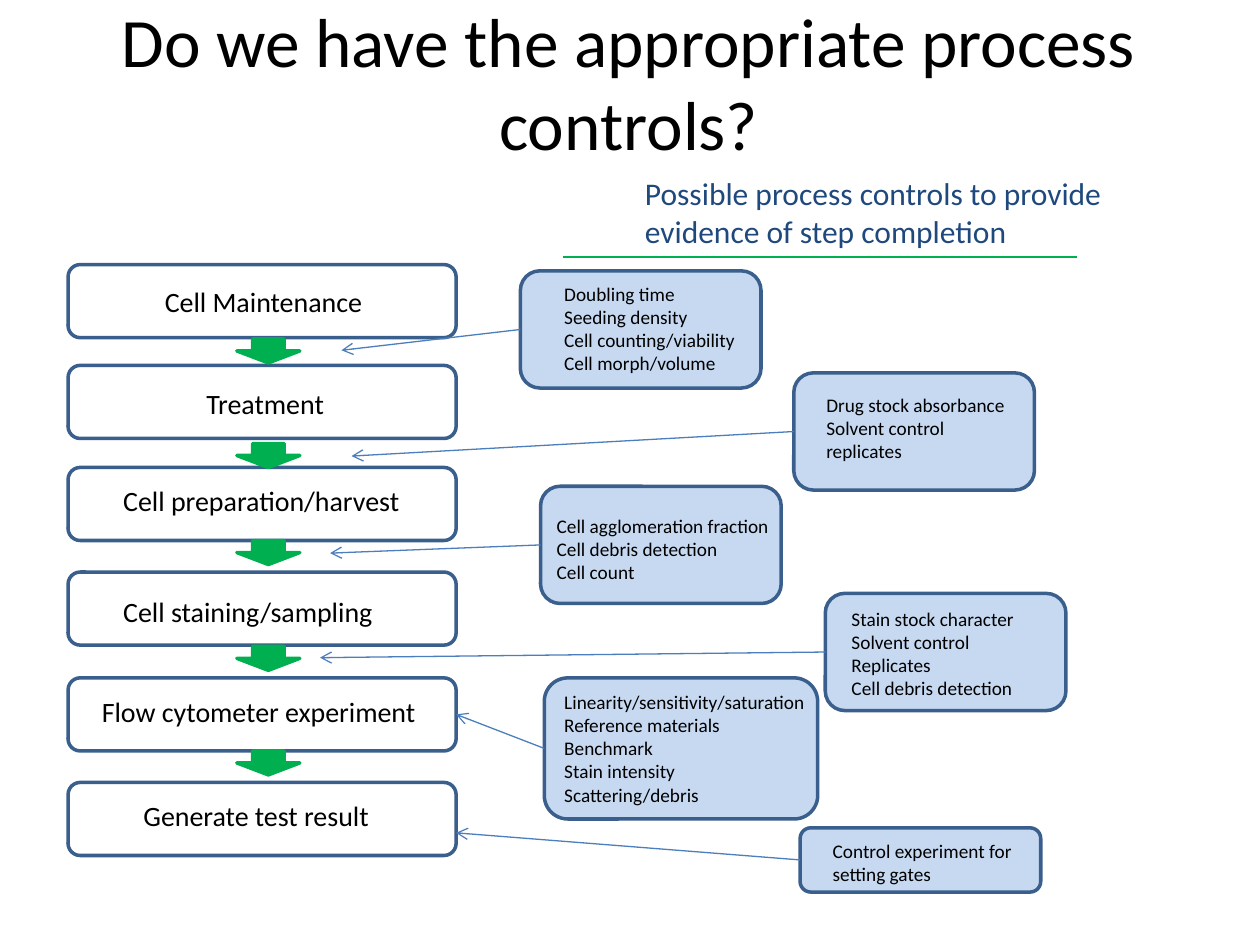
from pptx import Presentation
from pptx.dml.color import RGBColor
from pptx.enum.shapes import MSO_CONNECTOR, MSO_SHAPE
from pptx.enum.text import MSO_ANCHOR, MSO_AUTO_SIZE, PP_ALIGN
from pptx.oxml.ns import qn
from pptx.util import Inches, Pt
from lxml import etree

BLACK = RGBColor(0x00, 0x00, 0x00)
NAVY = RGBColor(0x1F, 0x49, 0x7D)
EDGE = RGBColor(0x3A, 0x5F, 0x8C)
BLUE = RGBColor(0x4B, 0x7E, 0xBC)
PALE = RGBColor(0xC6, 0xD9, 0xF1)
GREEN = RGBColor(0x00, 0xB0, 0x50)
ROUND = MSO_SHAPE.ROUNDED_RECTANGLE
DOWN = MSO_SHAPE.DOWN_ARROW
STRAIGHT = MSO_CONNECTOR.STRAIGHT
TOP, MIDDLE = MSO_ANCHOR.TOP, MSO_ANCHOR.MIDDLE
CENTER = PP_ALIGN.CENTER
NO_FIT = MSO_AUTO_SIZE.NONE
LEFT, RIGHT = 1, 3

# label, box top, label left, label top
STEPS = [
    ("Cell Maintenance", 2.1, 1.21, 2.21),
    ("Treatment", 2.9, 1.54, 3.02),
    ("Cell preparation/harvest", 3.71, 0.88, 3.79),
    ("Cell staining/sampling", 4.54, 0.88, 4.67),
    ("Flow cytometer experiment", 5.38, 0.71, 5.46),
    ("Generate test result", 6.21, 1.04, 6.29),
]
ARROWS = [2.69, 3.52, 4.29, 5.13, 5.96]

# box, text place, lines, arrow tip (a step number joins that step's side)
CHECKS = [
    ((4.13, 2.15, 1.91, 0.93), (4.38, 2.19, 1.56, 0.84),
     ["Doubling time", "Seeding density", "Cell counting/viability",
      "Cell morph/volume"], (2.71, 2.78)),
    ((6.3, 2.96, 1.91, 0.93), (6.46, 3.07, 1.63, 0.66),
     ["Drug stock absorbance", "Solvent control", "replicates"],
     (2.79, 3.62)),
    ((4.29, 3.86, 1.91, 0.93), (4.32, 4.03, 1.9, 0.66),
     ["Cell agglomeration fraction", "Cell debris detection",
      "Cell count"], (2.62, 4.39)),
    ((6.55, 4.71, 1.91, 0.93), (6.66, 4.77, 1.5, 0.84),
     ["Stain stock character", "Solvent control", "Replicates",
      "Cell debris detection"], (2.54, 5.22)),
    ((4.32, 5.38, 2.17, 1.12), (4.38, 5.43, 2.13, 1.03),
     ["Linearity/sensitivity/saturation", "Reference materials",
      "Benchmark", "Stain intensity", "Scattering/debris"], 4),
    ((6.35, 6.57, 1.91, 0.51), (6.51, 6.61, 1.97, 0.47),
     ["Control experiment for setting gates"], (3.62, 6.61)),
]


class Board:
    font = "Calibri"

    def __init__(self, slide):
        self.slide = slide
        self.shapes = slide.shapes

    def fill_text(self, frame, lines, size, color, align=None):
        for i, line in enumerate(lines):
            para = frame.paragraphs[0] if i == 0 else frame.add_paragraph()
            if align is not None:
                para.alignment = align
            run = para.add_run()
            run.text = line
            run.font.name = self.font
            run.font.size = Pt(size)
            run.font.color.rgb = color

    def title(self, place, text):
        box = self.shapes.title
        box.left, box.top, box.width, box.height = map(Inches, place)
        frame = box.text_frame
        frame.word_wrap = True
        frame.auto_size = NO_FIT
        frame.vertical_anchor = MIDDLE
        self.fill_text(frame, [text], 39.6, BLACK, CENTER)

    def text(self, place, lines, size, color=BLACK, wrap=True):
        frame = self.shapes.add_textbox(*map(Inches, place)).text_frame
        frame.word_wrap = wrap
        frame.vertical_anchor = TOP
        self.fill_text(frame, lines, size, color)

    def shape(self, kind, place, fill, edge):
        item = self.shapes.add_shape(kind, *map(Inches, place))
        item.shadow.inherit = False
        if fill is None:
            item.fill.background()
        else:
            item.fill.solid()
            item.fill.fore_color.rgb = fill
        item.line.color.rgb = edge
        item.line.width = Pt(2)
        return item

    def line(self, start, end, color, head=False):
        item = self.shapes.add_connector(
            STRAIGHT, *map(Inches, (*start, *end)))
        item.line.color.rgb = color
        item.line.width = Pt(0.75)
        props = item._element.spPr
        if head:
            stroke = props.find(qn("a:ln"))
            etree.SubElement(stroke, qn("a:tailEnd"), type="arrow")
        etree.SubElement(props, qn("a:effectLst"))
        return item


def main():
    deck = Presentation()
    deck.slide_width, deck.slide_height = Inches(10), Inches(7.5)
    board = Board(deck.slides.add_slide(deck.slide_layouts[5]))
    board.title((0.49, 0.02, 9, 1.25),
                "Do we have the appropriate process controls?")

    steps = []
    for label, top, left, y in STEPS:
        steps.append(board.shape(ROUND, (0.54, top, 3.08, 0.58), None, EDGE))
        board.text((left, y, 2.83, 0.37), [label], 16)
    for top in ARROWS:
        board.shape(DOWN, (1.88, top, 0.5, 0.19), GREEN, GREEN)

    boxes = [board.shape(ROUND, check[0], PALE, EDGE) for check in CHECKS]
    for box, (place, area, lines, tip) in zip(boxes, CHECKS):
        board.text(area, lines, 11, wrap=len(lines) == 1)
        x, y, _, high = place
        joined = isinstance(tip, int)
        end = (3.62, 5.67) if joined else tip
        link = board.line((x, y + high / 2), end, BLUE, head=True)
        link.begin_connect(box, LEFT)
        if joined:
            link.end_connect(steps[tip], RIGHT)

    board.text((5.02, 1.33, 4.42, 0.71),
               ["Possible process controls to provide "
                "evidence of step completion"], 18, NAVY)
    board.line((4.47, 2.04), (8.55, 2.04), GREEN)
    deck.save("out.pptx")


if __name__ == "__main__":
    main()
